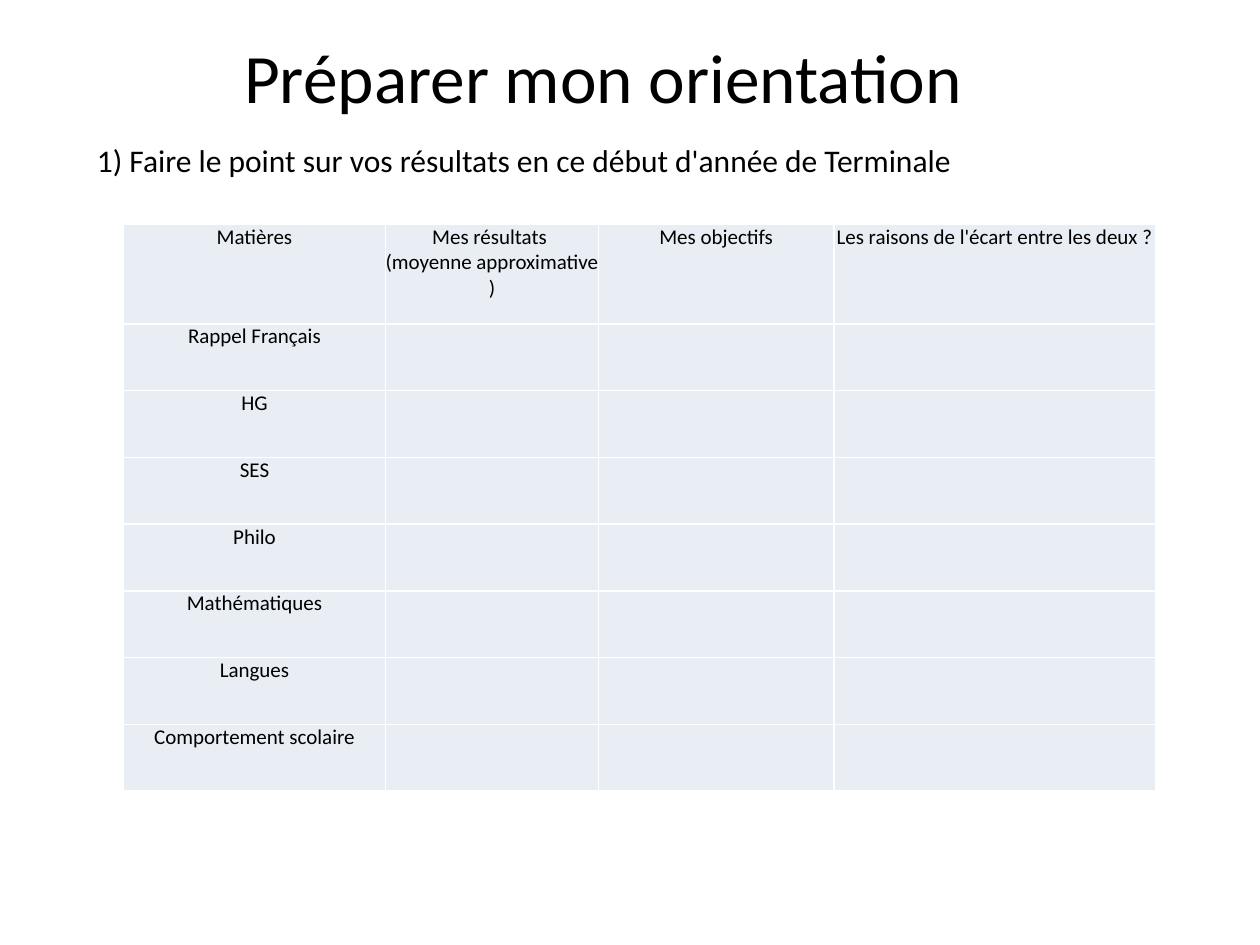
"""Build the slide on preparing study choices, with its table of subjects."""
from lxml import etree
from pptx import Presentation, util as u
from pptx.dml.color import RGBColor
from pptx.enum import text as t
from pptx.oxml.ns import qn

BLACK = RGBColor(0, 0, 0)
WHITE = RGBColor(255, 255, 255)
PALE = RGBColor(0xE9, 0xED, 0xF4)

TITLE = "Préparer mon orientation "
QUESTION = "1) Faire le point sur vos résultats en ce début d'année de Terminale"
HEADERS = ["Matières", "Mes résultats \n(moyenne approximative )", "Mes objectifs",
           "Les raisons de l'écart entre les deux ?"]
SUBJECTS = ["Rappel Français", "HG", "SES", "Philo", "Mathématiques", "Langues",
            "Comportement scolaire"]
WIDTHS = [2.08, 1.69, 1.87, 2.55]
HEIGHTS = [0.79] + [0.53] * len(SUBJECTS)


def write(frame, words, size=12, align=t.PP_ALIGN.CENTER):
    """Fill a text frame, one paragraph for each line."""
    frame.word_wrap = True
    for number, line in enumerate(words.split("\n")):
        para = frame.add_paragraph() if number else frame.paragraphs[0]
        para.alignment = align
        span = para.add_run()
        span.text = line
        span.font.name = "Calibri"
        span.font.size = u.Pt(size)
        span.font.color.rgb = BLACK


def add_text(page, words, area, anchor=t.MSO_ANCHOR.TOP, **style):
    """Add a text box at the area given in inches."""
    box = page.shapes.add_textbox(*map(u.Inches, area))
    box.text_frame.vertical_anchor = anchor
    write(box.text_frame, words, **style)


def style_cell(cell):
    """Give a cell its pale fill and thin white borders."""
    cell.fill.solid()
    cell.fill.fore_color.rgb = PALE
    properties = cell._tc.get_or_add_tcPr()
    for place, side in enumerate(("lnL", "lnR", "lnT", "lnB")):
        line = etree.Element(qn(f"a:{side}"), w=str(u.Pt(1)))
        fill = etree.SubElement(line, qn("a:solidFill"))
        etree.SubElement(fill, qn("a:srgbClr"), val=str(WHITE))
        properties.insert(place, line)


def add_grid(page, left, top):
    """Add the table of subjects, with blank cells to fill in."""
    rows = [HEADERS] + [[subject, "", "", ""] for subject in SUBJECTS]
    table = page.shapes.add_table(
        len(rows), len(WIDTHS), u.Inches(left), u.Inches(top),
        u.Inches(sum(WIDTHS)), u.Inches(sum(HEIGHTS))).table
    table.first_row = table.horz_banding = False
    for column, width in zip(table.columns, WIDTHS):
        column.width = u.Inches(width)
    for row, height, entries in zip(table.rows, HEIGHTS, rows):
        row.height = u.Inches(height)
        for cell, words in zip(row.cells, entries):
            style_cell(cell)
            if words:
                cell.margin_left = cell.margin_right = 0
                cell.margin_top = cell.margin_bottom = 0
                write(cell.text_frame, words)


def main():
    deck = Presentation()
    deck.slide_width, deck.slide_height = u.Inches(10), u.Inches(7.5)
    page = deck.slides.add_slide(deck.slide_layouts[6])
    add_text(page, TITLE, (0.2, 0.3, 9.3, 0.61), anchor=t.MSO_ANCHOR.MIDDLE, size=39.6)
    add_grid(page, left=0.98, top=1.78)
    add_text(page, QUESTION, (0.67, 1.07, 8.19, 0.4), size=18, align=t.PP_ALIGN.LEFT)
    deck.save("out.pptx")


if __name__ == "__main__":
    main()
